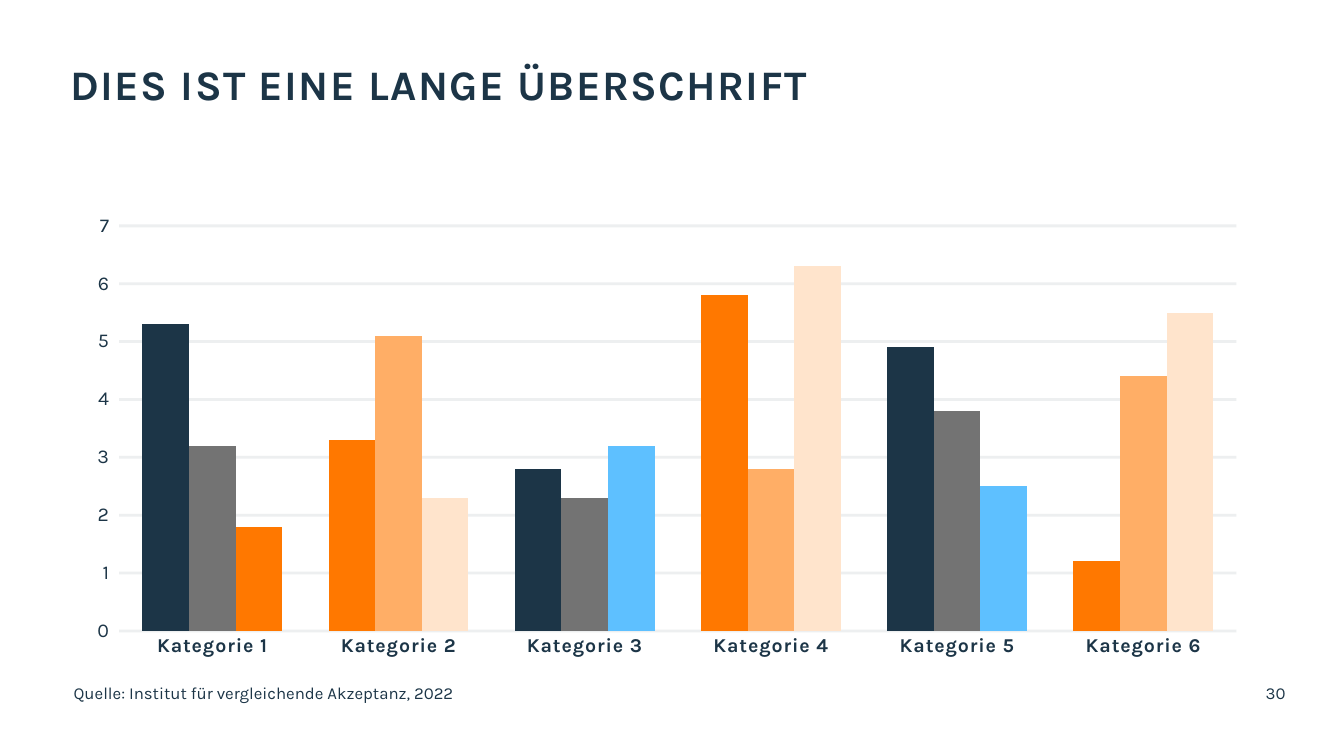
from lxml import etree
from pptx import Presentation
from pptx.chart.data import CategoryChartData
from pptx.dml.color import RGBColor
from pptx.enum.chart import XL_CHART_TYPE, XL_TICK_MARK
from pptx.enum.text import MSO_ANCHOR, MSO_AUTO_SIZE, PP_ALIGN
from pptx.oxml import parse_xml
from pptx.oxml.ns import nsdecls, qn
from pptx.util import Inches, Pt

COLUMNS = XL_CHART_TYPE.COLUMN_CLUSTERED
NO_TICK, OUT_TICK = XL_TICK_MARK.NONE, XL_TICK_MARK.OUTSIDE
TOP, NO_FIT = MSO_ANCHOR.TOP, MSO_AUTO_SIZE.NONE
LEFT, RIGHT = PP_ALIGN.LEFT, PP_ALIGN.RIGHT

NAVY = RGBColor(0x1C, 0x35, 0x47)
GREY = RGBColor(0x73, 0x73, 0x73)
BLUE = RGBColor(0x5E, 0xC0, 0xFF)
ORANGE = RGBColor(0xFF, 0x78, 0x00)
PEACH = RGBColor(0xFF, 0xAE, 0x66)
CREAM = RGBColor(0xFF, 0xE4, 0xCC)
FONT = "Karla"

# Content
TITLE = "DIES IST EINE LANGE ÜBERSCHRIFT"
SOURCE = "Quelle: Institut für vergleichende Akzeptanz, 2022"
PAGE = "30"
CATS = [f"Kategorie {n}" for n in range(1, 7)]
# name, values, main colour, colours of single columns
SERIES = [
    ("Series 1", (5.3, 3.3, 2.8, 5.8, 4.9, 1.2), NAVY,
     {1: ORANGE, 3: ORANGE, 5: ORANGE}),
    ("Series 2", (3.2, 5.1, 2.3, 2.8, 3.8, 4.4), GREY,
     {1: PEACH, 3: PEACH, 5: PEACH}),
    ("Series 3", (1.8, 2.3, 3.2, 6.3, 2.5, 5.5), BLUE,
     {0: ORANGE, 1: CREAM, 3: CREAM, 5: CREAM}),
]
PLOT = {"x": 0.04, "y": 0.05, "w": 0.94, "h": 0.87}


def style(font, size, bold=False):
    font.name, font.size, font.bold = FONT, Pt(size), bold
    font.color.rgb = NAVY


def put_text(box, text, size=12, bold=False, align=LEFT, line=1.0, space=0):
    frame = box.text_frame
    frame.margin_left = frame.margin_right = 0
    frame.margin_top = frame.margin_bottom = 0
    frame.word_wrap, frame.auto_size = True, NO_FIT
    frame.vertical_anchor = TOP
    par = frame.paragraphs[0]
    par.alignment, par.line_spacing = align, line
    run = par.add_run()
    run.text = text
    style(run.font, size, bold)
    if space:
        run.font._element.set("spc", str(space))


def paint(fill, color):
    fill.solid()
    fill.fore_color.rgb = color


def set_axis(axis, tick, bold=False):
    axis.major_tick_mark, axis.minor_tick_mark = tick, NO_TICK
    axis.format.line.fill.background()
    style(axis.tick_labels.font, 14, bold)


def add_columns(slide):
    data = CategoryChartData()
    data.categories = CATS
    for name, vals, _, _ in SERIES:
        data.add_series(name, vals)
    chart = slide.shapes.add_chart(COLUMNS, Inches(0.71), Inches(2.01),
                                   Inches(11.79), Inches(4.62), data).chart
    chart.has_legend = chart.has_title = False
    style(chart.font, 10)

    # Columns
    plot = chart.plots[0]
    plot.gap_width, plot.overlap = 100, 0
    plot.vary_by_categories = False
    for series, (_, _, color, points) in zip(plot.series, SERIES):
        series.invert_if_negative = False
        paint(series.format.fill, color)
        for index, shade in points.items():
            paint(series.points[index].format.fill, shade)

    # Axes and faint grid
    cat, val = chart.category_axis, chart.value_axis
    set_axis(cat, NO_TICK, bold=True)
    cat.tick_labels.font._element.set("spc", "50")
    set_axis(val, OUT_TICK)
    val.minimum_scale, val.maximum_scale, val.major_unit = 0, 7, 1
    grid = val.major_gridlines.format.line
    grid.width = Pt(2)
    paint(grid.fill, NAVY)
    tint = val.major_gridlines._xAx.find(".//" + qn("a:srgbClr"))
    etree.SubElement(tint, qn("a:alpha"), val="8000")

    # Plot area place, as shares of the chart
    modes = "".join(f'<c:{k}Mode val="edge"/>' for k in "xy")
    sizes = "".join(f'<c:{k} val="{v}"/>' for k, v in PLOT.items())
    area = chart._chartSpace.chart.plotArea
    for old in area.findall(qn("c:layout")):
        area.remove(old)
    area.insert(0, parse_xml(
        f'<c:layout {nsdecls("c")}><c:manualLayout>'
        f'<c:layoutTarget val="inner"/>{modes}{sizes}'
        '</c:manualLayout></c:layout>'))


def main():
    prs = Presentation()
    prs.slide_width, prs.slide_height = Inches(13.33), Inches(7.5)
    slide = prs.slides.add_slide(prs.slide_layouts[5])

    # Title
    title = slide.shapes.title
    title.left, title.top = Inches(0.7), Inches(0.66)
    title.width, title.height = Inches(8.2), Inches(1.12)
    put_text(title, TITLE, size=30, bold=True, line=0.85, space=100)

    add_columns(slide)

    # Footer
    for text, left, width, align in ((SOURCE, 0.73, 8.17, LEFT),
                                     (PAGE, 10.6, 2.15, RIGHT)):
        box = slide.shapes.add_textbox(Inches(left), Inches(6.77),
                                       Inches(width), Inches(0.4))
        put_text(box, text, align=align)

    prs.save("out.pptx")


if __name__ == "__main__":
    main()
